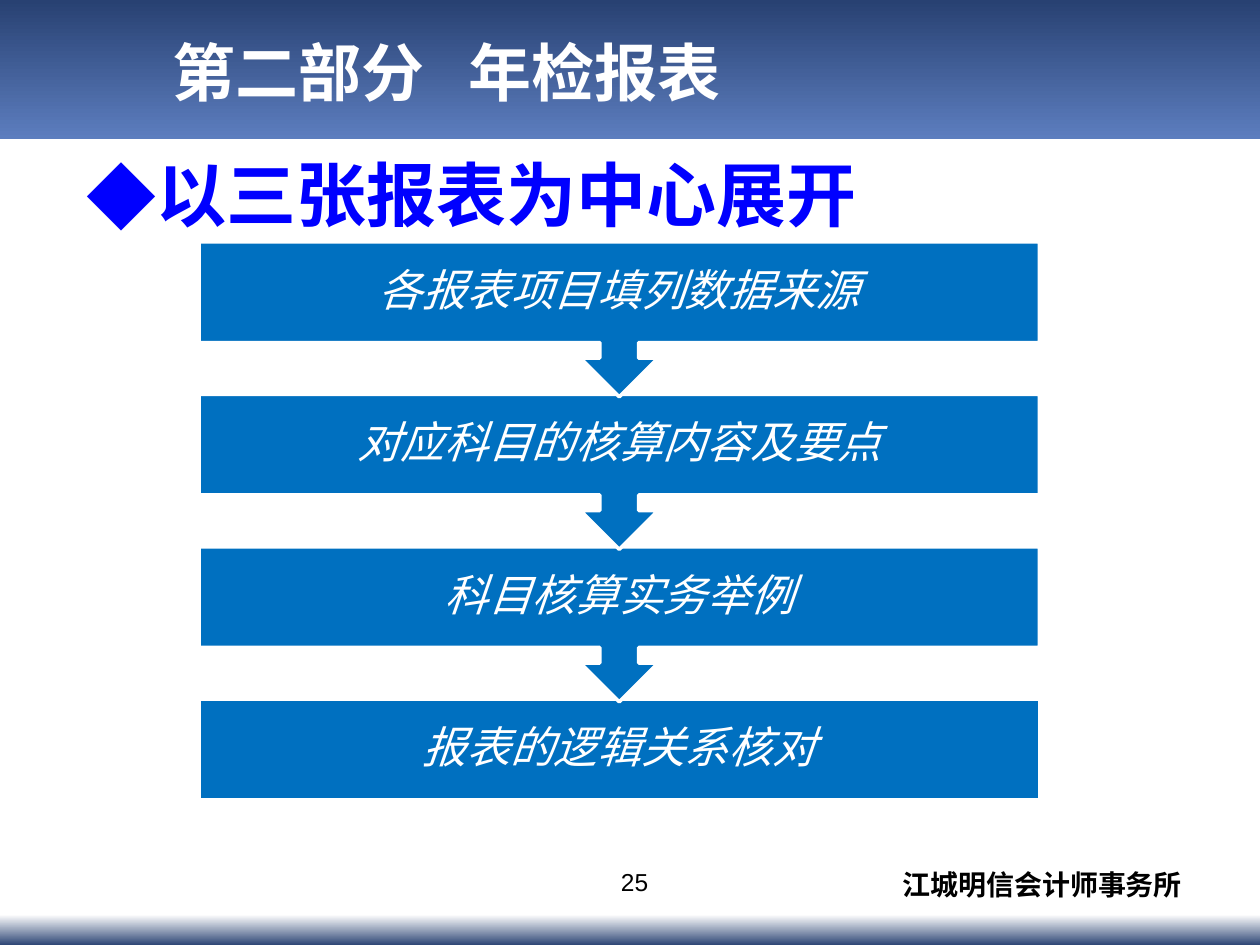
from dataclasses import dataclass

from lxml import etree
from pptx import Presentation
from pptx.dml.color import RGBColor
from pptx.enum.shapes import MSO_SHAPE
from pptx.enum.text import MSO_ANCHOR, MSO_AUTO_SIZE, PP_ALIGN
from pptx.oxml.ns import qn
from pptx.util import Inches, Pt

RECTANGLE = MSO_SHAPE.RECTANGLE
CALLOUT = MSO_SHAPE.DOWN_ARROW_CALLOUT
TOP, MIDDLE = MSO_ANCHOR.TOP, MSO_ANCHOR.MIDDLE
LEFT, CENTER, RIGHT = PP_ALIGN.LEFT, PP_ALIGN.CENTER, PP_ALIGN.RIGHT
JUSTIFY = PP_ALIGN.JUSTIFY
NO_AUTOFIT = MSO_AUTO_SIZE.NONE


@dataclass(frozen=True)
class Theme:
    white: str = "FFFFFF"
    black: str = "000000"
    heading: str = "0000FF"
    step: str = "0070C0"
    header: tuple = ("284172", "5C7DBE")
    footer: tuple = ("FFFFFF", "2F4776")
    chinese: str = "Noto Sans CJK SC"
    number_font: str = "Arial"
    firm_font: str = "Calibri"
    title_size: int = 36
    heading_size: int = 40
    step_size: int = 25
    firm_size: int = 16
    number_size: int = 14


THEME = Theme()
STEPS = ["各报表项目填列数据来源", "对应科目的核算内容及要点", "科目核算实务举例", "报表的逻辑关系核对"]
STEP_LEFT, STEP_TOP, STEP_WIDTH = 1.58, 1.92, 6.67
STEP_PITCH, BOX_HEIGHT, CALLOUT_HEIGHT = 1.21, 0.8, 1.23


def color(value):
    return RGBColor.from_string(value)


def place(shape, left, top, width, height):
    shape.left, shape.top = Inches(left), Inches(top)
    shape.width, shape.height = Inches(width), Inches(height)


def set_frame(shape, anchor, horizontal=0.1, vertical=0.05):
    frame = shape.text_frame
    frame.word_wrap = True
    frame.auto_size = NO_AUTOFIT
    frame.vertical_anchor = anchor
    frame.margin_left = frame.margin_right = Inches(horizontal)
    frame.margin_top = frame.margin_bottom = Inches(vertical)
    return frame.paragraphs[0]


def add_span(para, text, size, ink, font=THEME.chinese, bold=False, italic=False):
    span = para.add_run()
    span.text = text
    span.font.size = Pt(size)
    span.font.name = font
    span.font.bold = bold
    span.font.italic = italic
    span.font.color.rgb = color(ink)
    latin = span.font._element.find(qn("a:latin"))
    east_asian = etree.Element(qn("a:ea"), typeface=THEME.chinese)
    latin.addnext(east_asian)


def add_band(page, top, height, colors):
    band = page.shapes.add_shape(RECTANGLE, 0, Inches(top), Inches(10), Inches(height))
    band.shadow.inherit = False
    band.line.fill.background()
    band.fill.gradient()
    band.fill.gradient_angle = 270
    for stop, value in zip(band.fill.gradient_stops, colors):
        stop.color.rgb = color(value)
    page.shapes._spTree.insert(2, band._element)


def add_title(page):
    title = page.shapes.title
    place(title, 1.37, 0.23, 7.83, 0.67)
    para = set_frame(title, MIDDLE, 0, 0)
    tabs = etree.SubElement(para._p.get_or_add_pPr(), qn("a:tabLst"))
    etree.SubElement(tabs, qn("a:tab"), pos=str(Inches(2.35)), algn="l")
    para.alignment = LEFT
    add_span(para, "第二部分\t年检报表", THEME.title_size, THEME.white, bold=True)


def add_heading(page):
    body = page.placeholders[1]
    place(body, 0.59, 1.15, 8.86, 5.1)
    para = set_frame(body, TOP)
    properties = para._p.get_or_add_pPr()
    properties.set("marL", str(Inches(0.32)))
    properties.set("indent", str(-Inches(0.32)))
    bullet_color = etree.SubElement(properties, qn("a:buClr"))
    etree.SubElement(bullet_color, qn("a:srgbClr"), val=THEME.heading)
    etree.SubElement(properties, qn("a:buFont"), typeface=THEME.chinese)
    etree.SubElement(properties, qn("a:buChar"), char="◆")
    para.alignment = JUSTIFY
    para.space_before = Pt(0)
    para.space_after = Pt(5)
    add_span(para, "以三张报表为中心展开", THEME.heading_size, THEME.heading, bold=True)


def add_step(page, text, index):
    is_last = index == len(STEPS) - 1
    kind, height = (RECTANGLE, BOX_HEIGHT) if is_last else (CALLOUT, CALLOUT_HEIGHT)
    top = STEP_TOP + index * STEP_PITCH
    step = page.shapes.add_shape(
        kind, Inches(STEP_LEFT), Inches(top), Inches(STEP_WIDTH), Inches(height))
    step.shadow.inherit = False
    step.fill.solid()
    step.fill.fore_color.rgb = color(THEME.step)
    step.line.color.rgb = color(THEME.white)
    step.line.width = Pt(2)
    para = set_frame(step, MIDDLE, 0.19, 0.19)
    para.alignment = CENTER
    para.line_spacing = 0.9
    add_span(para, text, THEME.step_size, THEME.white, italic=True)


def add_label(page, area, text, size, font, alignment, anchor, bold=False):
    box = page.shapes.add_textbox(*(Inches(length) for length in area))
    para = set_frame(box, anchor)
    para.alignment = alignment
    add_span(para, text, size, THEME.black, font, bold)


def main():
    deck = Presentation()
    deck.slide_width, deck.slide_height = Inches(10), Inches(7.5)
    page = deck.slides.add_slide(deck.slide_layouts[1])
    add_band(page, 7.26, 0.24, THEME.footer)
    add_band(page, 0, 1.1, THEME.header)
    add_title(page)
    add_heading(page)
    for index, text in reversed(list(enumerate(STEPS))):
        add_step(page, text, index)
    add_label(page, (4.83, 6.83, 0.58, 0.34), "25",
              THEME.number_size, THEME.number_font, LEFT, TOP)
    add_label(page, (6.5, 6.82, 2.98, 0.39), "江城明信会计师事务所",
              THEME.firm_size, THEME.firm_font, RIGHT, MIDDLE, bold=True)
    deck.save("out.pptx")


if __name__ == "__main__":
    main()
